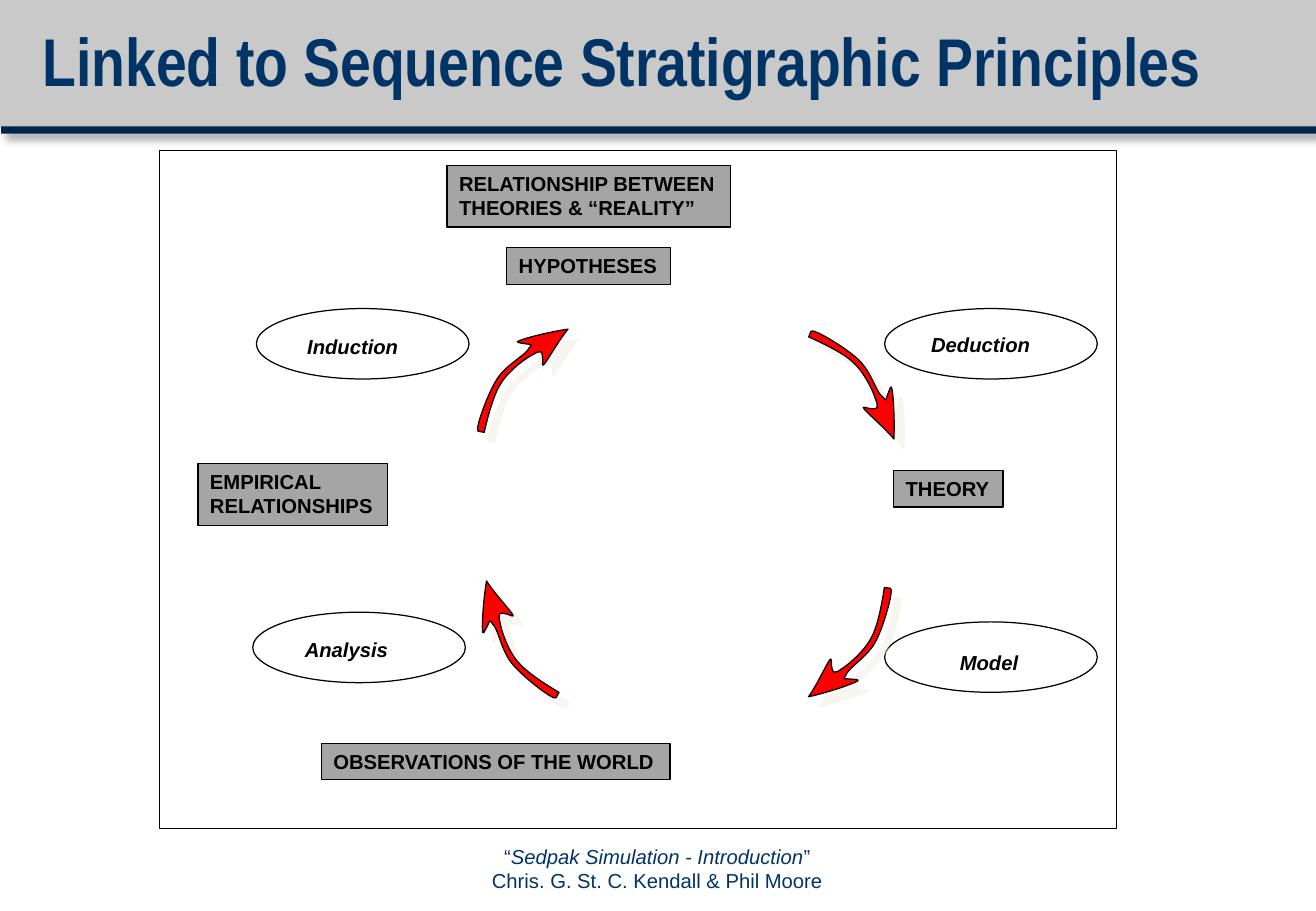
from dataclasses import dataclass

from lxml import etree
from pptx import Presentation
from pptx.dml.color import RGBColor
from pptx.enum.shapes import MSO_SHAPE
from pptx.enum.text import MSO_ANCHOR, MSO_AUTO_SIZE, PP_ALIGN
from pptx.oxml.ns import qn
from pptx.util import Emu, Inches, Pt

RECTANGLE, OVAL = MSO_SHAPE.RECTANGLE, MSO_SHAPE.OVAL
LEFT, CENTER = PP_ALIGN.LEFT, PP_ALIGN.CENTER
TOP = MSO_ANCHOR.TOP
NO_FIT, GROW = MSO_AUTO_SIZE.NONE, MSO_AUTO_SIZE.SHAPE_TO_FIT_TEXT

NAVY = RGBColor(0x00, 0x33, 0x66)
DEEP_NAVY = RGBColor(0x00, 0x26, 0x4D)
SILVER = RGBColor(0xC9, 0xC9, 0xC9)
GRAY = RGBColor(0xA5, 0xA5, 0xA5)
CREAM = RGBColor(0xEE, 0xEC, 0xE1)
RED = RGBColor(0xFF, 0x00, 0x00)
WHITE = RGBColor(0xFF, 0xFF, 0xFF)
BLACK = RGBColor(0x00, 0x00, 0x00)

CELL = Inches(0.1)  # side of one square of the layout grid
STEP = CELL // 10  # unit of the arrow outline


@dataclass(frozen=True)
class Area:
    """Left, top, width and height in grid cells."""
    column: float
    row: float
    columns: float
    rows: float

    def emu(self) -> list[Emu]:
        return [Emu(round(n * CELL)) for n in
                (self.column, self.row, self.columns, self.rows)]


@dataclass(frozen=True)
class Label:
    area: Area
    lines: tuple[str, ...]


@dataclass(frozen=True)
class Arrow:
    """Centre in grid cells, and clockwise turn in degrees."""
    column: float
    row: float
    turn: float


OVALS = [Area(column, row, 17.5, 5.8) for column, row in
         ((21.1, 25.4), (20.8, 50.4), (72.8, 51.2), (72.8, 25.4))]
STAGES = [
    Label(Area(36.8, 13.6, 23.3, 5.1), ("RELATIONSHIP BETWEEN", "THEORIES & “REALITY”")),
    Label(Area(73.55, 38.75, 9, 3), ("THEORY",)),
    Label(Area(41.7, 20.4, 13.5, 3), ("HYPOTHESES",)),
    Label(Area(16.3, 38.15, 15.6, 5.1), ("EMPIRICAL", "RELATIONSHIPS")),
    Label(Area(26.45, 61.2, 28.7, 3), ("OBSERVATIONS OF THE WORLD",)),
]
METHODS = [
    Label(Area(75.65, 26.85, 10.3, 3), ("Deduction",)),
    Label(Area(78, 53.05, 6.9, 3), ("Model",)),
    Label(Area(24.3, 27, 9.6, 3), ("Induction",)),
    Label(Area(24.1, 52, 8.9, 3), ("Analysis",)),
]
ARROWS = [Arrow(43.05, 31.35, 0), Arrow(70.1, 31.7, 101.1),
          Arrow(69.9, 52.85, 175.7), Arrow(42.95, 52.65, 287.9)]

# Arrow outline: two control points and an end per curve
ARROW_START = (3, 84)
ARROW_CURVES = [
    ((0, 83), (11, 53), (18, 42)),
    ((25, 30), (41, 22), (44, 17)),
    ((47, 11), (51, 14), (36, 11)),
    ((30, 10), (62, 2), (77, 0)),
    ((67, 12), (56, 34), (56, 29)),
    ((57, 15), (53, 18), (48, 21)),
    ((42, 24), (27, 35), (21, 46)),
    ((14, 57), (8, 85), (8, 85)),
    ((8, 85), (8, 85), ARROW_START),
]


def paint(shape, fill: RGBColor, line: RGBColor | None = BLACK) -> None:
    shape.shadow.inherit = False
    shape.fill.solid()
    shape.fill.fore_color.rgb = fill
    if line is None:
        shape.line.fill.background()
    else:
        shape.line.color.rgb = line
        shape.line.width = Pt(0.75)


def cast_shadow(shape, color: RGBColor, alpha: int, blur: float, distance: float) -> None:
    effects = shape._element.spPr.find(qn("a:effectLst"))
    outer = etree.SubElement(effects, qn("a:outerShdw"), blurRad=str(Pt(blur)),
                             dist=str(Pt(distance)), dir="2700000",
                             algn="ctr", rotWithShape="0")
    tint = etree.SubElement(outer, qn("a:srgbClr"), val=str(color))
    etree.SubElement(tint, qn("a:alpha"), val=str(alpha * 1000))


def add_block(page, kind, area: Area, fill: RGBColor, line: RGBColor | None = BLACK):
    block = page.shapes.add_shape(kind, *area.emu())
    paint(block, fill, line)
    return block


def add_span(para, text: str, *, size: float = 12, font: str = "Arial",
             color: RGBColor = BLACK, bold: bool = False, italic: bool = False) -> None:
    span = para.add_run()
    span.text = text
    span.font.size, span.font.name = Pt(size), font
    span.font.bold, span.font.italic = bold, italic
    span.font.color.rgb = color


def write(box, lines, *, align=LEFT, wrap: bool = False, fit=GROW, **style) -> None:
    """Each line is a text, or a list of (text, italic) pieces."""
    frame = box.text_frame
    frame.word_wrap, frame.auto_size = wrap, fit
    frame.vertical_anchor = TOP
    for index, line in enumerate(lines):
        para = frame.add_paragraph() if index else frame.paragraphs[0]
        para.alignment = align
        if isinstance(line, str):
            add_span(para, line, **style)
        else:
            for text, italic in line:
                add_span(para, text, italic=italic, **style)


def bend(shape) -> None:
    """Turn the straight sides of the arrow outline into its curves."""
    ends = [curve[-1] for curve in ARROW_CURVES]
    left, top = min(x for x, _ in ends), min(y for _, y in ends)
    sides = list(shape._element.iter(qn("a:lnTo")))
    for side, curve in zip(sides, ARROW_CURVES):
        bezier = etree.Element(qn("a:cubicBezTo"))
        for x, y in curve:
            etree.SubElement(bezier, qn("a:pt"), x=str((x - left) * STEP),
                             y=str((y - top) * STEP))
        side.getparent().replace(side, bezier)


def add_arrow(page, arrow: Arrow) -> None:
    builder = page.shapes.build_freeform(*ARROW_START, scale=1 / STEP)
    builder = page.shapes.build_freeform(*(n * STEP for n in ARROW_START))
    builder.add_line_segments([(x * STEP, y * STEP) for *_, (x, y) in ARROW_CURVES])
    shape = builder.convert_to_shape()
    bend(shape)
    shape.left = round(arrow.column * CELL - shape.width / 2)
    shape.top = round(arrow.row * CELL - shape.height / 2)
    shape.rotation = arrow.turn
    paint(shape, RED)
    cast_shadow(shape, CREAM, 50, 0, 8.5)


def main() -> None:
    deck = Presentation()
    deck.slide_width, deck.slide_height = Inches(10.83), Inches(7.5)
    page = deck.slides.add_slide(deck.slide_layouts.get_by_name("Title Only"))

    # Header band and its rule
    add_block(page, RECTANGLE, Area(0, 0, 108.3, 10.5), SILVER, None)
    rule = add_block(page, RECTANGLE, Area(0.1, 10.4, 108.2, 0.6), DEEP_NAVY, None)
    cast_shadow(rule, BLACK, 40, 5, 4)

    # Credit below the diagram
    credit = page.shapes.add_textbox(*Area(31.1, 69, 46, 4).emu())
    write(credit, [[("“", False), ("Sedpak Simulation - Introduction", True), ("”", False)],
                   "Chris. G. St. C. Kendall & Phil Moore"],
          align=CENTER, wrap=True, fit=NO_FIT, color=NAVY)

    # Diagram frame, ovals, stages and methods
    add_block(page, RECTANGLE, Area(13.1, 12.4, 78.8, 55.8), WHITE)
    for oval in OVALS:
        add_block(page, OVAL, oval, WHITE)
    for stage in STAGES:
        write(add_block(page, RECTANGLE, stage.area, GRAY), stage.lines, bold=True)
    for method in METHODS:
        write(page.shapes.add_textbox(*method.area.emu()), method.lines,
              bold=True, italic=True)

    # Cycle of arrows
    for arrow in ARROWS:
        add_arrow(page, arrow)

    # Title, in front of the header band
    title = page.shapes.title
    title.left, title.top, title.width, title.height = Area(2.5, 1.8, 101, 10).emu()
    write(title, ["Linked to Sequence Stratigraphic Principles"], wrap=True, fit=NO_FIT,
          size=40, font="Arial Narrow", color=NAVY, bold=True)
    title.text_frame.paragraphs[0].line_spacing = 0.9
    page.shapes._spTree.append(title._element)

    deck.save("out.pptx")


if __name__ == "__main__":
    main()
